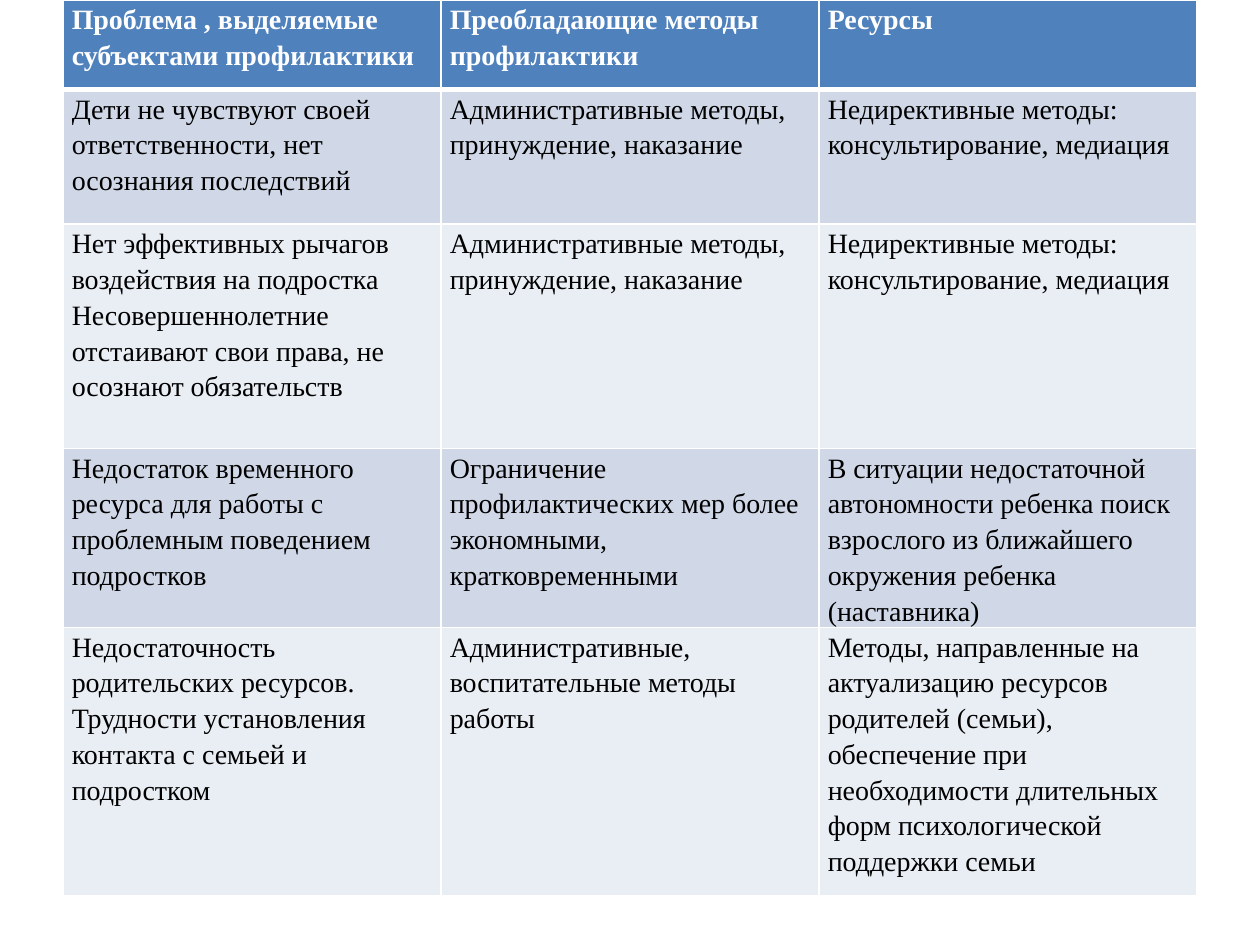
from dataclasses import dataclass

from lxml import etree
from pptx import Presentation
from pptx.dml.color import RGBColor
from pptx.enum.text import MSO_ANCHOR
from pptx.oxml.ns import qn
from pptx.util import Inches, Pt

TOP = MSO_ANCHOR.TOP


@dataclass(frozen=True)
class Theme:
    font: str = "Times New Roman"
    size: int = 16
    header_fill: str = "4F81BD"
    band_fills: tuple = ("E9EDF4", "D0D8E8")  # even rows, odd rows
    header_text: str = "FFFFFF"
    body_text: str = "000000"
    border: str = "FFFFFF"
    thin: int = 1
    thick: int = 3


theme = Theme()


def add_border(cell, side, width):
    """Draw one side (L, R, T or B) of a cell."""
    properties = cell._tc.get_or_add_tcPr()
    line = etree.SubElement(properties, qn(f"a:ln{side}"), w=str(Pt(width)))
    fill = etree.SubElement(line, qn("a:solidFill"))
    etree.SubElement(fill, qn("a:srgbClr"), val=theme.border)


# Wording: a line break inside a cell starts a new paragraph
rows = [
    ("Проблема , выделяемые субъектами профилактики",
     "Преобладающие методы профилактики",
     "Ресурсы"),
    ("Дети не чувствуют своей ответственности, нет осознания последствий",
     "Административные методы, принуждение, наказание",
     "Недирективные методы: консультирование, медиация"),
    ("Нет эффективных рычагов воздействия на подростка\n"
     "Несовершеннолетние отстаивают свои права, не осознают обязательств",
     "Административные методы, принуждение, наказание",
     "Недирективные методы: консультирование, медиация"),
    ("Недостаток временного ресурса для работы с проблемным поведением подростков",
     "Ограничение профилактических мер более экономными, кратковременными",
     "В ситуации недостаточной автономности ребенка поиск взрослого "
     "из ближайшего окружения ребенка (наставника)"),
    ("Недостаточность родительских ресурсов. Трудности установления контакта "
     "с семьей и подростком",
     "Административные, воспитательные методы работы",
     "Методы, направленные на актуализацию ресурсов родителей (семьи), обеспечение "
     "при необходимости длительных форм психологической поддержки семьи"),
]
row_heights = [0.71, 1.07, 1.78, 1.42, 2.13]

# Slide
presentation = Presentation()
presentation.slide_width = Inches(10)
presentation.slide_height = Inches(7.5)
slide = presentation.slides.add_slide(presentation.slide_layouts[6])

# Table: three equal columns, centred across the slide
table_width = int(presentation.slide_width * 0.9)
table_left = (presentation.slide_width - table_width) // 2
table = slide.shapes.add_table(
    len(rows), len(rows[0]), table_left, 0, table_width, Inches(sum(row_heights))
).table
for row, height in zip(table.rows, row_heights):
    row.height = Inches(height)

# Cells
for row_index, texts in enumerate(rows):
    is_header = row_index == 0
    fill = theme.header_fill if is_header else theme.band_fills[row_index % 2]
    text_color = theme.header_text if is_header else theme.body_text
    for column_index, text in enumerate(texts):
        cell = table.cell(row_index, column_index)
        cell.margin_left = cell.margin_right = Inches(0.07)
        cell.margin_top = cell.margin_bottom = 0
        cell.vertical_anchor = TOP

        # Borders, with a thick rule under the header
        for side in "LRTB":
            under_header = (row_index, side) in ((0, "B"), (1, "T"))
            add_border(cell, side, theme.thick if under_header else theme.thin)
        cell.fill.solid()
        cell.fill.fore_color.rgb = RGBColor.from_string(fill)

        # Text
        cell.text_frame.text = text
        paragraphs = cell.text_frame.paragraphs
        for paragraph in paragraphs:
            paragraph.line_spacing = 1.15
            paragraph.space_after = Pt(10 if len(paragraphs) == 1 else 0)
            for run in paragraph.runs:
                run.font.name = theme.font
                run.font.size = Pt(theme.size)
                run.font.bold = is_header
                run.font.color.rgb = RGBColor.from_string(text_color)

presentation.save("out.pptx")
